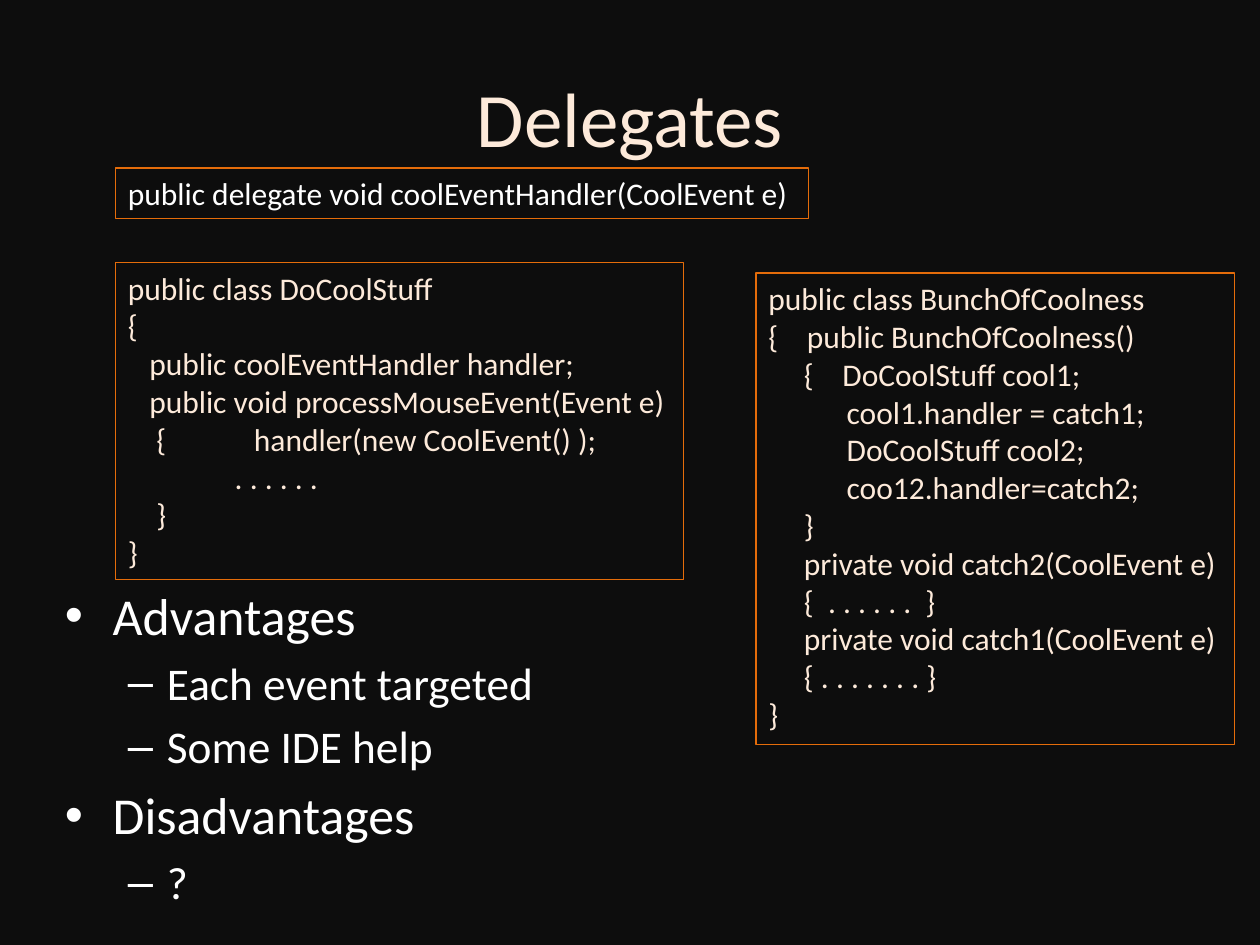
from dataclasses import dataclass

from lxml.etree import SubElement
from pptx import Presentation
from pptx.dml.color import RGBColor
from pptx.enum.shapes import MSO_SHAPE as Shape
from pptx.enum.text import MSO_ANCHOR as Anchor, PP_ALIGN as Align
from pptx.oxml.ns import qn
from pptx.util import Inches, Pt


@dataclass(frozen=True)
class Theme:
    """Colours, font and type sizes of the slide."""
    background: RGBColor = RGBColor.from_string("0D0D0D")
    cream: RGBColor = RGBColor.from_string("FDEADA")
    white: RGBColor = RGBColor.from_string("FFFFFF")
    border: RGBColor = RGBColor.from_string("E46C0A")
    font: str = "Calibri"
    title: float = 44
    code: float = 18
    bullets: tuple = (29.6, 25.9)
    space: float = 4.07


THEME = Theme()
WIDTH, HEIGHT = Inches(10), Inches(7.5)
COLUMNS, ROWS = 120, 90
BULLET_LEVELS = (("•", 0.38, 0.38), ("–", 0.81, 0.31))

DELEGATE = [(0, 0, "public delegate void coolEventHandler(CoolEvent e)")]
SENDER = [
    (0, 0, "public class DoCoolStuff"),
    (0, 0, "{"),
    (3, 0, "public coolEventHandler handler;"),
    (3, 0, "public void processMouseEvent(Event e)"),
    (4, 13.7, "{\thandler(new CoolEvent() );"),
    (15, 0, ". . . . . ."),
    (4, 0, "}"),
    (0, 0, "}"),
]
RECEIVER = [
    (0, 0, "public class BunchOfCoolness"),
    (0, 5.4, "{\tpublic BunchOfCoolness()"),
    (5, 5.4, "{\tDoCoolStuff cool1;"),
    (11, 0, "cool1.handler = catch1;"),
    (11, 0, "DoCoolStuff cool2;"),
    (11, 0, "coo12.handler=catch2;"),
    (5, 0, "}"),
    (5, 0, "private void catch2(CoolEvent e)"),
    (5, 0, "{  . . . . . .  }"),
    (5, 0, "private void catch1(CoolEvent e)"),
    (5, 0, "{ . . . . . . . }"),
    (0, 0, "}"),
]
POINTS = [
    (0, "Advantages"),
    (1, "Each event targeted"),
    (1, "Some IDE help"),
    (0, "Disadvantages"),
    (1, "?"),
]


def place(box):
    """Turn a box in grid columns and rows into slide lengths."""
    left, top, width, height = box
    return (int(WIDTH * left / COLUMNS), int(HEIGHT * top / ROWS),
            int(WIDTH * width / COLUMNS), int(HEIGHT * height / ROWS))


def paragraphs(frame, count):
    """Return the first paragraph of a frame and as many new ones as needed."""
    return [frame.paragraphs[0]] + [frame.add_paragraph() for _ in range(count - 1)]


def add_run(paragraph, text, size, color):
    """Append one styled run."""
    run = paragraph.add_run()
    run.text = text
    run.font.name = THEME.font
    run.font.size = Pt(size)
    run.font.color.rgb = color


def set_indent(paragraph, margin, hanging):
    """Set the left margin and hanging indent, and return the properties."""
    properties = paragraph._p.get_or_add_pPr()
    properties.set("marL", str(int(margin)))
    properties.set("indent", str(-int(hanging)))
    return properties


def add_title(slide, box, text):
    """Place the centred title."""
    frame = slide.shapes.add_textbox(*place(box)).text_frame
    frame.word_wrap = True
    frame.vertical_anchor = Anchor.MIDDLE
    paragraph = frame.paragraphs[0]
    paragraph.alignment = Align.CENTER
    add_run(paragraph, text, THEME.title, THEME.cream)


def add_code(slide, box, lines, color):
    """Place an outlined code listing, indented in widths of a space."""
    shape = slide.shapes.add_shape(Shape.RECTANGLE, *place(box))
    shape.shadow.inherit = False
    shape.fill.background()
    shape.line.color.rgb = THEME.border
    shape.line.width = Pt(0.75)
    frame = shape.text_frame
    frame.word_wrap = True
    frame.vertical_anchor = Anchor.TOP
    for paragraph, (start, hanging, text) in zip(paragraphs(frame, len(lines)), lines):
        paragraph.alignment = Align.LEFT
        set_indent(paragraph, Pt((start + hanging) * THEME.space), Pt(hanging * THEME.space))
        add_run(paragraph, text, THEME.code, color)


def add_bullets(slide, box, points):
    """Place the two-level bullet list."""
    frame = slide.shapes.add_textbox(*place(box)).text_frame
    frame.word_wrap = True
    for paragraph, (level, text) in zip(paragraphs(frame, len(points)), points):
        mark, margin, hanging = BULLET_LEVELS[level]
        size = THEME.bullets[level]
        paragraph.level = level
        paragraph.space_before = Pt(round(size * 0.2, 1))
        properties = set_indent(paragraph, Inches(margin), Inches(hanging))
        SubElement(properties, qn("a:buFont"), typeface="Arial")
        SubElement(properties, qn("a:buChar"), char=mark)
        add_run(paragraph, text, size, THEME.white)


def main():
    """Build and save the slide."""
    presentation = Presentation()
    presentation.slide_width, presentation.slide_height = WIDTH, HEIGHT
    slide = presentation.slides.add_slide(presentation.slide_layouts[6])
    slide.background.fill.solid()
    slide.background.fill.fore_color.rgb = THEME.background
    add_title(slide, (6, 3.6, 108, 15), "Delegates")
    add_bullets(slide, (5, 55, 108, 32.4), POINTS)
    add_code(slide, (11, 16, 66, 4.8), DELEGATE, THEME.white)
    add_code(slide, (11, 25, 54.1, 30.2), SENDER, THEME.cream)
    add_code(slide, (72, 26, 45.6, 44.9), RECEIVER, THEME.cream)
    presentation.save("out.pptx")


if __name__ == "__main__":
    main()
